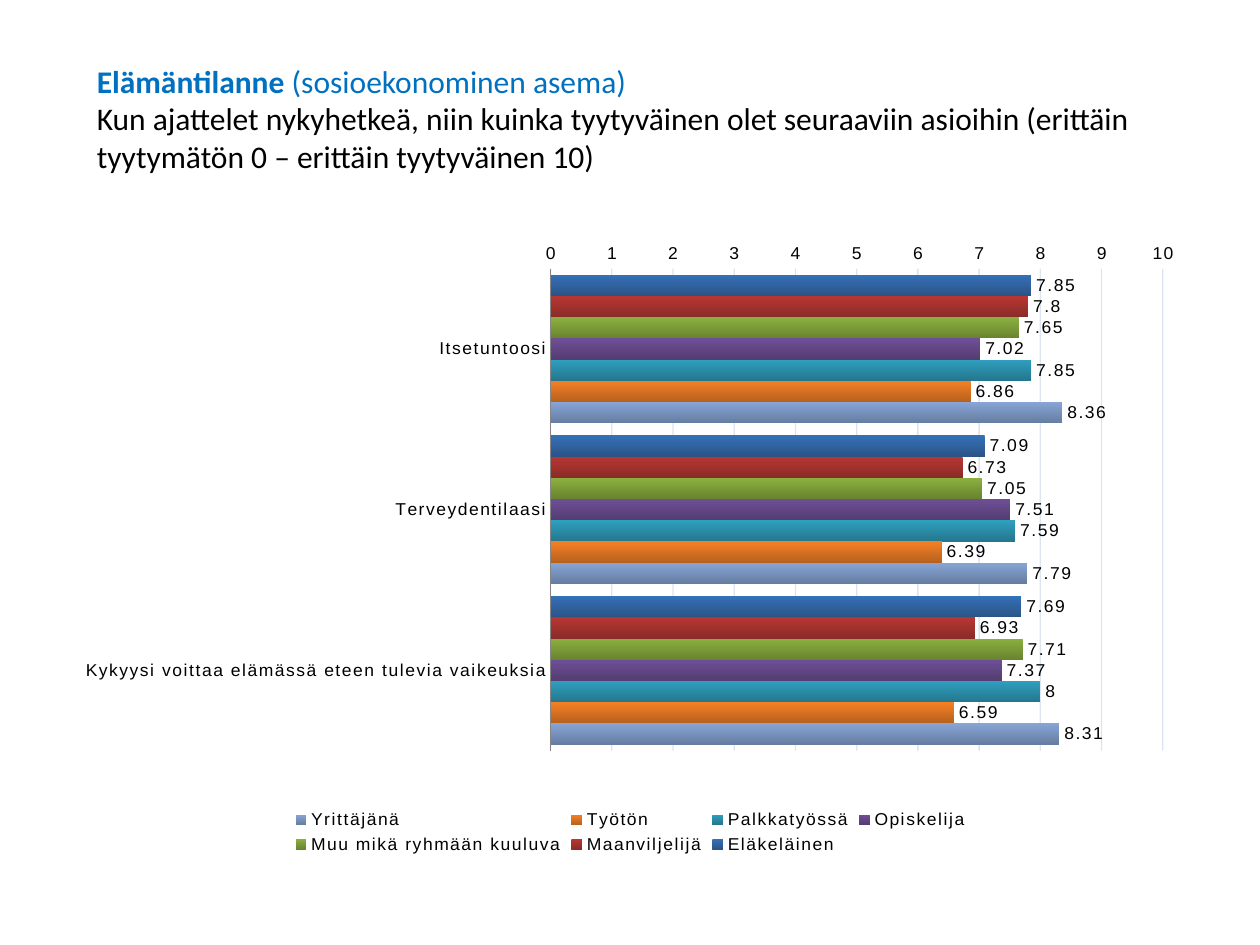
from dataclasses import dataclass

from lxml import etree
from pptx import Presentation
from pptx.chart.data import CategoryChartData
from pptx.dml.color import RGBColor
from pptx.enum.chart import (XL_AXIS_CROSSES, XL_CHART_TYPE, XL_LABEL_POSITION,
                             XL_LEGEND_POSITION, XL_TICK_MARK)
from pptx.oxml.ns import qn
from pptx.util import Inches, Pt

BAR_CLUSTERED = XL_CHART_TYPE.BAR_CLUSTERED
CROSS_MAX = XL_AXIS_CROSSES.MAXIMUM
OUTSIDE_END = XL_LABEL_POSITION.OUTSIDE_END
LEGEND_BOTTOM = XL_LEGEND_POSITION.BOTTOM
NO_TICK = XL_TICK_MARK.NONE


@dataclass(frozen=True)
class Theme:
    heading: str = "0070C0"
    ink: str = "000000"
    grid: str = "4F81BD"
    axis: str = "868686"
    heading_font: str = "Calibri"
    chart_font: str = "Arial"
    heading_size: int = 18
    chart_size: int = 10
    chart_spacing: int = 100


@dataclass(frozen=True)
class Group:
    name: str
    scores: tuple[float, ...]
    top: str
    bottom: str


@dataclass(frozen=True)
class Frame:
    x: float
    y: float
    w: float
    h: float


THEME = Theme()
TOPICS = ("Itsetuntoosi", "Terveydentilaasi",
          "Kykyysi voittaa elämässä eteen tulevia vaikeuksia")
GROUPS = (
    Group("Eläkeläinen", (7.85, 7.09, 7.69), "3570B8", "2B5485"),
    Group("Maanviljelijä", (7.8, 6.73, 6.93), "B93733", "892B28"),
    Group("Muu mikä ryhmään kuuluva", (7.65, 7.05, 7.71), "8BB03F", "69842F"),
    Group("Opiskelija", (7.02, 7.51, 7.37), "6E4F97", "543D71"),
    Group("Palkkatyössä", (7.85, 7.59, 8), "2F9FBF", "25778D"),
    Group("Työtön", (6.86, 6.39, 6.59), "F58025", "B8611E"),
    Group("Yrittäjänä", (8.36, 7.79, 8.31), "87A5D6", "667DA1"),
)
HEADING = (
    (("Elämäntilanne ", THEME.heading, True),
     ("(sosioekonominen asema)", THEME.heading, False)),
    (("Kun ajattelet nykyhetkeä, niin kuinka tyytyväinen olet seuraaviin "
      "asioihin (erittäin tyytymätön 0 – erittäin tyytyväinen 10)",
      THEME.ink, False),),
)


def style_font(font, face: str, size: int, color: str, bold: bool = False) -> None:
    font.name = face
    font.size = Pt(size)
    font.bold = bold
    font.color.rgb = RGBColor.from_string(color)


def style_chart_font(font) -> None:
    style_font(font, THEME.chart_font, THEME.chart_size, THEME.ink)


def add_heading(slide) -> None:
    box = slide.shapes.add_textbox(Inches(0.67), Inches(0.44), Inches(8.83), Inches(1.01))
    frame = box.text_frame
    frame.word_wrap = True
    for index, parts in enumerate(HEADING):
        paragraph = frame.add_paragraph() if index else frame.paragraphs[0]
        for text, color, bold in parts:
            run = paragraph.add_run()
            run.text = text
            style_font(run.font, THEME.heading_font, THEME.heading_size, color, bold)


def set_layout(parent, index: int, frame: Frame, inner: bool = False) -> None:
    for old in parent.findall(qn("c:layout")):
        parent.remove(old)
    layout = etree.Element(qn("c:layout"))
    manual = etree.SubElement(layout, qn("c:manualLayout"))
    settings = [("layoutTarget", "inner")] if inner else []
    settings += [("xMode", "edge"), ("yMode", "edge"), ("x", frame.x),
                 ("y", frame.y), ("w", frame.w), ("h", frame.h)]
    for tag, value in settings:
        etree.SubElement(manual, qn(f"c:{tag}")).set("val", str(value))
    parent.insert(index, layout)


def style_axes(chart) -> None:
    topics, scores = chart.category_axis, chart.value_axis
    for axis in (topics, scores):
        axis.major_tick_mark = axis.minor_tick_mark = NO_TICK
        style_chart_font(axis.tick_labels.font)
    topics.reverse_order = True
    topics.crosses = CROSS_MAX
    topics.format.line.color.rgb = RGBColor.from_string(THEME.axis)
    scores.minimum_scale, scores.maximum_scale, scores.major_unit = 0, 10, 1
    scores.format.line.fill.background()
    scores.has_major_gridlines = True
    grid = scores.major_gridlines
    grid.format.line.width = Pt(0.75)
    grid.format.line.color.rgb = RGBColor.from_string(THEME.grid)
    for color in scores._element.find(qn("c:majorGridlines")).iter(qn("a:srgbClr")):
        etree.SubElement(color, qn("a:alpha")).set("val", "20000")


def style_series(series, group: Group) -> None:
    fill = series.format.fill
    fill.gradient()
    fill.gradient_angle = 270
    for stop, color in zip(fill.gradient_stops, (group.top, group.bottom)):
        stop.color.rgb = RGBColor.from_string(color)
    series.format.line.fill.background()
    labels = series.data_labels
    labels.show_value = True
    labels.position = OUTSIDE_END
    style_chart_font(labels.font)


def add_satisfaction_chart(slide) -> None:
    data = CategoryChartData()
    data.categories = TOPICS
    for group in GROUPS:
        data.add_series(group.name, group.scores)
    chart = slide.shapes.add_chart(BAR_CLUSTERED, Inches(0.5), Inches(1.94),
                                   Inches(9), Inches(4.88), data).chart
    chart.has_title = False
    style_chart_font(chart.font)
    style_axes(chart)
    plot = chart.plots[0]
    plot.gap_width = 58
    plot.vary_by_categories = False
    for series, group in zip(plot.series, GROUPS):
        style_series(series, group)
    chart.has_legend = True
    chart.legend.position = LEGEND_BOTTOM
    chart.legend.include_in_layout = False
    style_chart_font(chart.legend.font)
    root = chart._chartSpace
    set_layout(next(root.iter(qn("c:plotArea"))), 0, Frame(0.43, 0.02, 0.54, 0.8), True)
    set_layout(next(root.iter(qn("c:legend"))), 1, Frame(0.2, 0.91, 0.6, 0.1))
    for properties in root.iter(qn("a:defRPr")):
        properties.set("spc", str(THEME.chart_spacing))


def main() -> None:
    deck = Presentation()
    deck.slide_width, deck.slide_height = Inches(10), Inches(7.5)
    slide = deck.slides.add_slide(deck.slide_layouts[6])
    add_satisfaction_chart(slide)
    add_heading(slide)
    deck.save("out.pptx")


if __name__ == "__main__":
    main()
